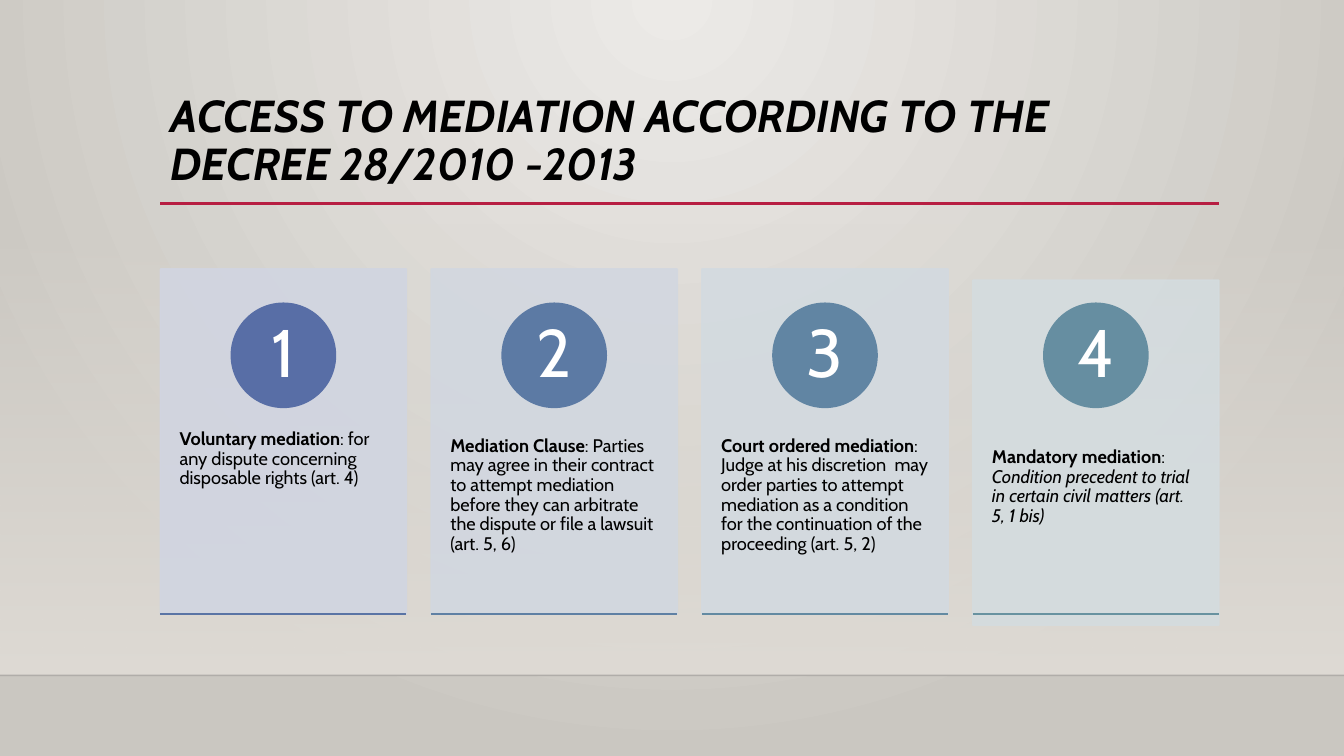
from dataclasses import dataclass

from lxml import etree
from pptx import Presentation
from pptx.dml.color import RGBColor
from pptx.enum import shapes as sh, text as tx
from pptx.oxml.ns import qn
from pptx.util import Pt

FONT = "Cabin"
INK = {
    "black": "000000", "white": "FFFFFF", "red": "B71E42", "edge": "000001",
    "light": "ECEAE7", "dark": "CAC7C1", "wall": "DFDBD5",
}
WIDE, HIGH = 960, 540
LEFT, STEP, WIDTH = 114.6, 193.44, 175.7
TOP, TALL, BASE = 192.2, 246.3, 438.5
DISC, DISC_TOP = 74.2, 216.7


@dataclass
class Card:
    head: str
    body: str
    tint: str
    disc: str
    rule: str
    note: str = ""
    drop: float = 0


CARDS = [
    Card("Voluntary mediation", ": for any dispute concerning disposable rights (art. 4)",
         "D1D5E1", "586EA6", "5A74A5"),
    Card("Mediation Clause", ": Parties may agree in their contract to attempt mediation "
         "before they can arbitrate the dispute or file a lawsuit (art. 5, 6)",
         "D2D7E0", "5C7AA4", "5F80A4"),
    Card("Court ordered mediation", ": Judge at his discretion  may order parties to attempt "
         "mediation as a condition for the continuation of the proceeding (art. 5, 2)",
         "D3DAE0", "6185A3", "638AA2"),
    Card("Mandatory mediation", ": ", "D4DCDF", "668EA1", "6892A0",
         "Condition precedent to trial in certain civil matters (art. 5, 1 bis)", 8),
]


def rgb(code: str) -> RGBColor:
    return RGBColor.from_string(code)


def fade(node, part: int) -> None:
    """Give every solid colour below a node an opacity in percent."""
    for tone in node.iter(qn("a:srgbClr")):
        etree.SubElement(tone, qn("a:alpha"), val=str(part * 1000))


def blend(fill, first: str, last: str) -> None:
    fill.gradient()
    for stop, code, place in zip(fill.gradient_stops, (first, last), (0, 1)):
        stop.color.rgb = rgb(code)
        stop.position = place


def rule(slide, x: float, y: float, width: float, code: str, size: float):
    line = slide.shapes.add_connector(
        sh.MSO_CONNECTOR.STRAIGHT, Pt(x), Pt(y), Pt(x + width), Pt(y))
    line.line.color.rgb = rgb(code)
    line.line.width = Pt(size)
    etree.SubElement(line._element.spPr, qn("a:effectLst"))
    return line


def block(slide, kind, x: float, y: float, width: float, height: float, code: str):
    shape = slide.shapes.add_shape(kind, Pt(x), Pt(y), Pt(width), Pt(height))
    shape.shadow.inherit = False
    shape.fill.solid()
    shape.fill.fore_color.rgb = rgb(code)
    shape.line.color.rgb = rgb(code)
    shape.line.width = Pt(1.25)
    return shape


def inset(frame, side: float, end: float) -> None:
    frame.word_wrap = True
    frame.margin_left = frame.margin_right = Pt(side)
    frame.margin_top = frame.margin_bottom = Pt(end)


def style(para, size: float, code: str, align) -> None:
    para.alignment = align
    para.line_spacing = 0.9
    para.font.name = FONT
    para.font.size = Pt(size)
    para.font.color.rgb = rgb(code)


def draw_back(slide) -> None:
    # Radial backdrop
    blend(slide.background.fill, INK["light"], INK["dark"])
    grad = slide._element.find(".//" + qn("a:gradFill"))
    grad.remove(grad.find(qn("a:lin")))
    ring = etree.SubElement(grad, qn("a:path"), {"path": "circle"})
    etree.SubElement(ring, qn("a:fillToRect"), l="43000", t="0", r="43000", b="100000")

    # Wall that fades in downwards, and the floor edge
    wall = slide.shapes.add_shape(
        sh.MSO_SHAPE.RECTANGLE, 0, Pt(159), Pt(WIDE), Pt(323.4))
    wall.shadow.inherit = False
    wall.line.fill.background()
    blend(wall.fill, INK["wall"], INK["wall"])
    wall.fill.gradient_angle = 270
    fade(wall._element.find(".//" + qn("a:gs")), 0)
    edge = rule(slide, 0, 482.4, WIDE, INK["edge"], 1)
    fade(edge._element.spPr, 20)


def draw_title(slide) -> None:
    rule(slide, LEFT, 145.3, 756.4, INK["red"], 2.5)
    title = slide.shapes.title
    title.left, title.top, title.width, title.height = Pt(LEFT), Pt(63.4), Pt(756), Pt(82.8)
    frame = title.text_frame
    frame.text = "ACCESS TO MEDIATION ACCORDING TO THE DECREE 28/2010 -2013"
    frame.vertical_anchor = tx.MSO_ANCHOR.TOP
    inset(frame, 7.2, 3.6)
    para = frame.paragraphs[0]
    style(para, 32, INK["black"], tx.PP_ALIGN.LEFT)
    para.font.bold = para.font.italic = True


def draw_card(slide, index: int, card: Card) -> None:
    x = LEFT + index * STEP
    # Panel
    panel = block(slide, sh.MSO_SHAPE.RECTANGLE, x, TOP + card.drop, WIDTH, TALL, card.tint)
    fade(panel._element.spPr, 90)

    # Description
    box = slide.shapes.add_textbox(
        Pt(x), Pt(TOP + card.drop + 93.6), Pt(WIDTH), Pt(147.6))
    inset(box.text_frame, 13.7, 26)
    para = box.text_frame.paragraphs[0]
    style(para, 13, INK["black"], tx.PP_ALIGN.LEFT)
    for words, bold, slant in (
            (card.head, True, False), (card.body, False, False), (card.note, False, True)):
        if words:
            run = para.add_run()
            run.text = words
            run.font.bold, run.font.italic = bold, slant

    # Numbered disc
    disc = block(slide, sh.MSO_SHAPE.OVAL, x + (WIDTH - DISC) / 2, DISC_TOP,
                 DISC, DISC, card.disc)
    frame = disc.text_frame
    inset(frame, 5.8, 0.7)
    frame.vertical_anchor = tx.MSO_ANCHOR.MIDDLE
    frame.text = str(index + 1)
    style(frame.paragraphs[0], 48, INK["white"], tx.PP_ALIGN.CENTER)

    # Base line
    rule(slide, x, BASE, WIDTH, card.rule, 1.25)


def main() -> None:
    deck = Presentation()
    deck.slide_width, deck.slide_height = Pt(WIDE), Pt(HIGH)
    slide = deck.slides.add_slide(deck.slide_layouts[5])
    draw_back(slide)
    draw_title(slide)
    for index, card in enumerate(CARDS):
        draw_card(slide, index, card)
    deck.save("out.pptx")


if __name__ == "__main__":
    main()
